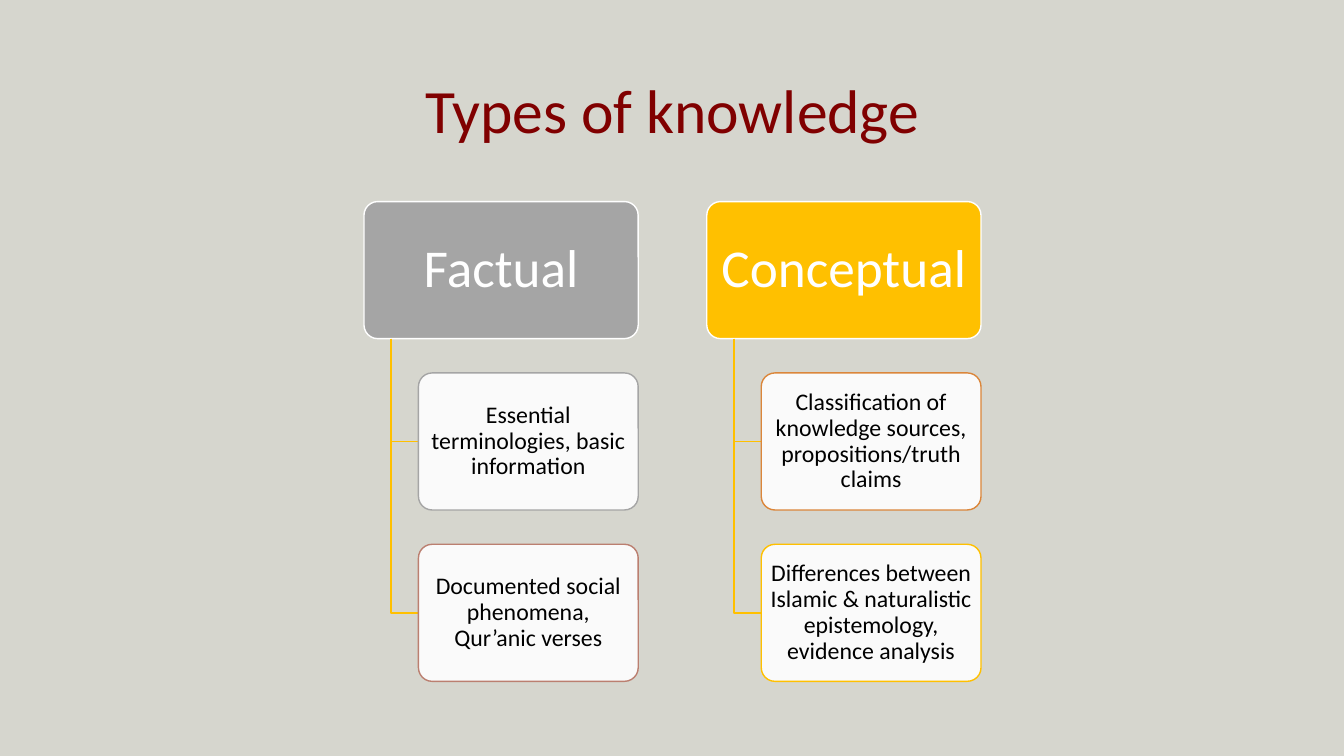
from lxml import etree
from pptx import Presentation
from pptx.dml.color import RGBColor
from pptx.enum.shapes import MSO_SHAPE as Shape
from pptx.enum.text import MSO_ANCHOR as Anchor, PP_ALIGN as Align
from pptx.oxml.ns import qn
from pptx.util import Inches, Pt

BACKGROUND = RGBColor(0xD6, 0xD6, 0xCE)
MAROON = RGBColor(0x80, 0x00, 0x00)
GREY = RGBColor(0xA5, 0xA5, 0xA5)
GOLD = RGBColor(0xFF, 0xC0, 0x00)
ROSE = RGBColor(0xBB, 0x7F, 0x70)
ORANGE = RGBColor(0xDB, 0x86, 0x3A)
WHITE = RGBColor(0xFF, 0xFF, 0xFF)
BLACK = RGBColor(0x00, 0x00, 0x00)

# Each column: heading, fill, and its details with their border colours
COLUMNS = [
    ("Factual", GREY, [
        ("Essential terminologies, basic information", GREY),
        ("Documented social phenomena, Qur’anic verses", ROSE),
    ]),
    ("Conceptual", GOLD, [
        ("Classification of knowledge sources, propositions/truth claims", ORANGE),
        ("Differences between Islamic & naturalistic epistemology, "
         "evidence analysis", GOLD),
    ]),
]

COLUMN_LEFT, COLUMN_TOP, COLUMN_PITCH = 3.61, 2, 3.4
COLUMN_WIDTH, BOX_HEIGHT, ROW_PITCH = 2.72, 1.36, 1.7
TRUNK_INDENT, DETAIL_INDENT = 0.27, 0.54


def write_text(shape, text, size, color, margins):
    frame = shape.text_frame
    side, end = (Inches(margin) for margin in margins)
    frame_format = {
        "word_wrap": True, "vertical_anchor": Anchor.MIDDLE,
        "margin_left": side, "margin_right": side,
        "margin_top": end, "margin_bottom": end,
    }
    for name, value in frame_format.items():
        setattr(frame, name, value)
    para = frame.paragraphs[0]
    para.alignment = Align.CENTER
    para.line_spacing = 0.9
    span = para.add_run()
    span.text = text
    for name, value in {"name": "Calibri", "size": Pt(size)}.items():
        setattr(span.font, name, value)
    span.font.color.rgb = color


def add_title(page, left, top, width, height):
    title = page.shapes.title
    box = {"left": left, "top": top, "width": width, "height": height}
    for name, value in box.items():
        setattr(title, name, Inches(value))
    write_text(title, "Types of knowledge", 44, MAROON, (0.1, 0.05))


def add_box(page, left, top, width, fill, border):
    box = page.shapes.add_shape(Shape.ROUNDED_RECTANGLE, Inches(left), Inches(top),
                                Inches(width), Inches(BOX_HEIGHT))
    box.adjustments[0] = 0.1
    box.shadow.inherit = False
    box.fill.solid()
    box.fill.fore_color.rgb = fill
    box.line.color.rgb = border
    box.line.width = Pt(1)
    return box


def make_translucent(box, percent):
    color = box.fill._xPr.find(qn("a:solidFill"))[0]
    etree.SubElement(color, qn("a:alpha")).set("val", str(percent * 1000))


def add_branch(page, left, top, right, bottom):
    builder = page.shapes.build_freeform(Inches(left), Inches(top))
    builder.add_line_segments([(Inches(left), Inches(bottom)),
                               (Inches(right), Inches(bottom))], close=False)
    branch = builder.convert_to_shape()
    branch.shadow.inherit = False
    branch.fill.background()
    branch.line.color.rgb = GOLD
    branch.line.width = Pt(1)


def add_column(page, left, top, width, heading, fill, details):
    # Heading
    box = add_box(page, left, top, width, fill, WHITE)
    write_text(box, heading, 38, WHITE, (0.08, 0.05))

    # Details hanging from the heading
    detail_left = left + DETAIL_INDENT
    for row, (text, border) in enumerate(details, start=1):
        detail_top = top + row * ROW_PITCH
        add_branch(page, left + TRUNK_INDENT, top + BOX_HEIGHT,
                   detail_left, detail_top + BOX_HEIGHT / 2)
        box = add_box(page, detail_left, detail_top, width - DETAIL_INDENT,
                      WHITE, border)
        make_translucent(box, 90)
        write_text(box, text, 17, BLACK, (0.04, 0.02))


def main():
    deck = Presentation()
    deck.slide_width, deck.slide_height = Inches(13.33), Inches(7.5)
    page = deck.slides.add_slide(deck.slide_layouts[5])
    page.background.fill.solid()
    page.background.fill.fore_color.rgb = BACKGROUND

    add_title(page, 0.92, 0.4, 11.5, 1.45)
    for index, column in enumerate(COLUMNS):
        add_column(page, COLUMN_LEFT + index * COLUMN_PITCH, COLUMN_TOP,
                   COLUMN_WIDTH, *column)
    deck.save("out.pptx")


if __name__ == "__main__":
    main()
